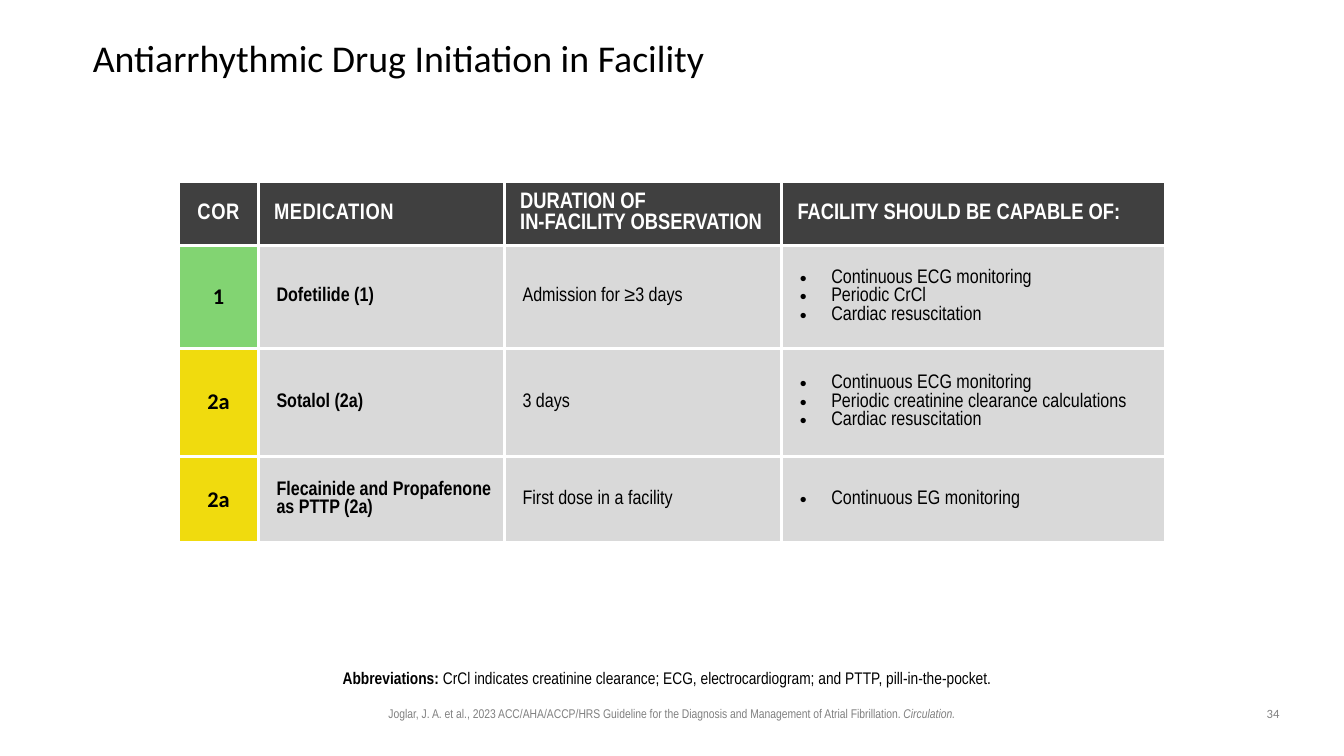
from lxml import etree
from pptx import Presentation
from pptx.dml.color import RGBColor
from pptx.enum.text import MSO_ANCHOR, PP_ALIGN
from pptx.oxml.ns import qn
from pptx.util import Cm, Pt

MIDDLE, TOP = MSO_ANCHOR.MIDDLE, MSO_ANCHOR.TOP
LEFT, CENTER = PP_ALIGN.LEFT, PP_ALIGN.CENTER
BLACK = RGBColor(0x00, 0x00, 0x00)
WHITE = RGBColor(0xFF, 0xFF, 0xFF)
GREY = RGBColor(0x80, 0x80, 0x80)
DARK = RGBColor(0x40, 0x40, 0x40)
LIGHT = RGBColor(0xD9, 0xD9, 0xD9)
GREEN = RGBColor(0x82, 0xD4, 0x72)
YELLOW = RGBColor(0xF0, 0xDB, 0x0E)
NARROW, CALIBRI = "Arial Narrow", "Calibri"

COLUMN_WIDTHS = (2.01, 6.2, 6.99, 9.68)
ROW_HEIGHTS = (1.04, 2.59, 2.72, 2.18)
HEADERS = (  # text, letter spacing in hundredths of a point
    ("COR", 50),
    ("MEDICATION", 40),
    ("DURATION OF \nIN-FACILITY OBSERVATION", 0),
    ("FACILITY SHOULD BE CAPABLE OF:", 0),
)
DRUGS = (  # class of recommendation, its colour, drug, duration, capabilities
    ("1", GREEN, "Dofetilide (1)", "Admission for ≥3 days",
     ("Continuous ECG monitoring", "Periodic CrCl", "Cardiac resuscitation")),
    ("2a", YELLOW, "Sotalol (2a)", "3 days",
     ("Continuous ECG monitoring", "Periodic creatinine clearance calculations",
      "Cardiac resuscitation")),
    ("2a", YELLOW, "Flecainide and Propafenone as PTTP (2a)", "First dose in a facility",
     ("Continuous EG monitoring",)),
)


def style_run(r, size, font, color, bold=False, italic=False):
    r.font.size, r.font.name = Pt(size), font
    r.font.bold, r.font.italic = bold, italic
    r.font.color.rgb = color


def add_text(s, box, runs, size, font, color, align=CENTER, anchor=TOP,
             margins=(0.25, 0.13, 0.25, 0.13), spacing=None):
    """Runs are (text, bold, italic); box and margins are in centimetres."""
    tf = s.shapes.add_textbox(*map(Cm, box)).text_frame
    tf.word_wrap, tf.vertical_anchor = True, anchor
    tf.margin_left, tf.margin_top, tf.margin_right, tf.margin_bottom = map(Cm, margins)
    p = tf.paragraphs[0]
    p.alignment, p.line_spacing = align, spacing
    for text, bold, italic in runs:
        r = p.add_run()
        r.text = text
        style_run(r, size, font, color, bold, italic)


def set_borders(cell, color, width):
    tcPr = cell._tc.get_or_add_tcPr()
    for i, side in enumerate(("lnL", "lnR", "lnT", "lnB")):
        ln = etree.Element(qn("a:" + side), w=str(Pt(width)))
        fill = etree.SubElement(ln, qn("a:solidFill"))
        etree.SubElement(fill, qn("a:srgbClr"), val=str(color))
        tcPr.insert(i, ln)


def set_indent(p, left, first=0, bullet=None):
    pPr = p._p.get_or_add_pPr()
    pPr.set("marL", str(Cm(left)))
    pPr.set("indent", str(Cm(first)))
    if bullet:
        etree.SubElement(pPr, qn("a:buFont"), typeface="Arial")
        etree.SubElement(pPr, qn("a:buChar"), char=bullet)


def fill_cell(cell, lines, fill, size, font, color, bold=False, align=LEFT,
              margin=0.13, left=0, first=0, bullet=None, tracking=0):
    cell.fill.solid()
    cell.fill.fore_color.rgb = fill
    set_borders(cell, WHITE, 2.25)
    cell.vertical_anchor = MIDDLE
    cell.margin_left = cell.margin_right = Cm(margin)
    cell.margin_top = cell.margin_bottom = Cm(0.13)
    tf = cell.text_frame
    for i, line in enumerate(lines):
        p = tf.paragraphs[0] if i == 0 else tf.add_paragraph()
        p.text = line
        p.alignment = align
        set_indent(p, left, first, bullet)
        for r in p.runs:
            style_run(r, size, font, color, bold)
            if tracking:
                r.font._element.set("spc", str(tracking))


def add_drug_table(s, box):
    table = s.shapes.add_table(len(ROW_HEIGHTS), len(COLUMN_WIDTHS), *map(Cm, box)).table
    table.first_row = table.horz_banding = False
    for column, width in zip(table.columns, COLUMN_WIDTHS):
        column.width = Cm(width)
    for row, height in zip(table.rows, ROW_HEIGHTS):
        row.height = Cm(height)

    # Header row
    for col, (text, tracking) in enumerate(HEADERS):
        fill_cell(table.cell(0, col), [text], DARK, 16, NARROW, WHITE, True,
                  align=LEFT if col else CENTER, margin=0.25,
                  left=0.15 if col else 0, tracking=tracking)

    # One row per drug
    for row, (cor, cor_color, drug, duration, needs) in enumerate(DRUGS, 1):
        fill_cell(table.cell(row, 0), [cor], cor_color, 16, CALIBRI, BLACK, True, CENTER)
        fill_cell(table.cell(row, 1), [drug], LIGHT, 14, NARROW, BLACK, True, left=0.33)
        fill_cell(table.cell(row, 2), [duration], LIGHT, 14, NARROW, BLACK, left=0.33)
        fill_cell(table.cell(row, 3), needs, LIGHT, 14, NARROW, BLACK,
                  left=1.12, first=-0.79, bullet="•")


def add_title(s, box):
    add_text(s, box, [("Antiarrhythmic Drug Initiation in Facility", False, False)],
             27, CALIBRI, BLACK, LEFT, MIDDLE, (0, 0, 0, 0), 0.9)


def add_abbreviations(s, box):
    add_text(s, box, [
        ("Abbreviations: ", True, False),
        ("CrCl indicates creatinine clearance; ECG, electrocardiogram; "
         "and PTTP, pill-in-the-pocket.", False, False),
    ], 12, NARROW, BLACK, margins=(0, 0.13, 0.25, 0.13), spacing=0.9)


def add_footer(s, box):
    left, top, width, height = box
    number_width = 1.07
    citation_width = 18.92
    add_text(s, (left, top, citation_width, height), [
        ("Joglar, J. A. et al., 2023 ACC/AHA/ACCP/HRS Guideline for the Diagnosis "
         "and Management of Atrial Fibrillation. ", False, False),
        ("Circulation.", False, True),
    ], 9, NARROW, GREY)
    add_text(s, (left + width - number_width, top, number_width, height),
             [("34", False, False)], 9, CALIBRI, GREY)


def main():
    prs = Presentation()
    prs.slide_width, prs.slide_height = Cm(33.87), Cm(19.05)
    s = prs.slides.add_slide(prs.slide_layouts[6])
    add_title(s, (2.34, 1.02, 27.3, 0.99))
    add_drug_table(s, (4.5, 4.57, sum(COLUMN_WIDTHS), sum(ROW_HEIGHTS)))
    add_abbreviations(s, (6.5, 16.76, 20.88, 0.48))
    add_footer(s, (7.47, 17.65, 25.15, 0.64))
    prs.save("out.pptx")


if __name__ == "__main__":
    main()
